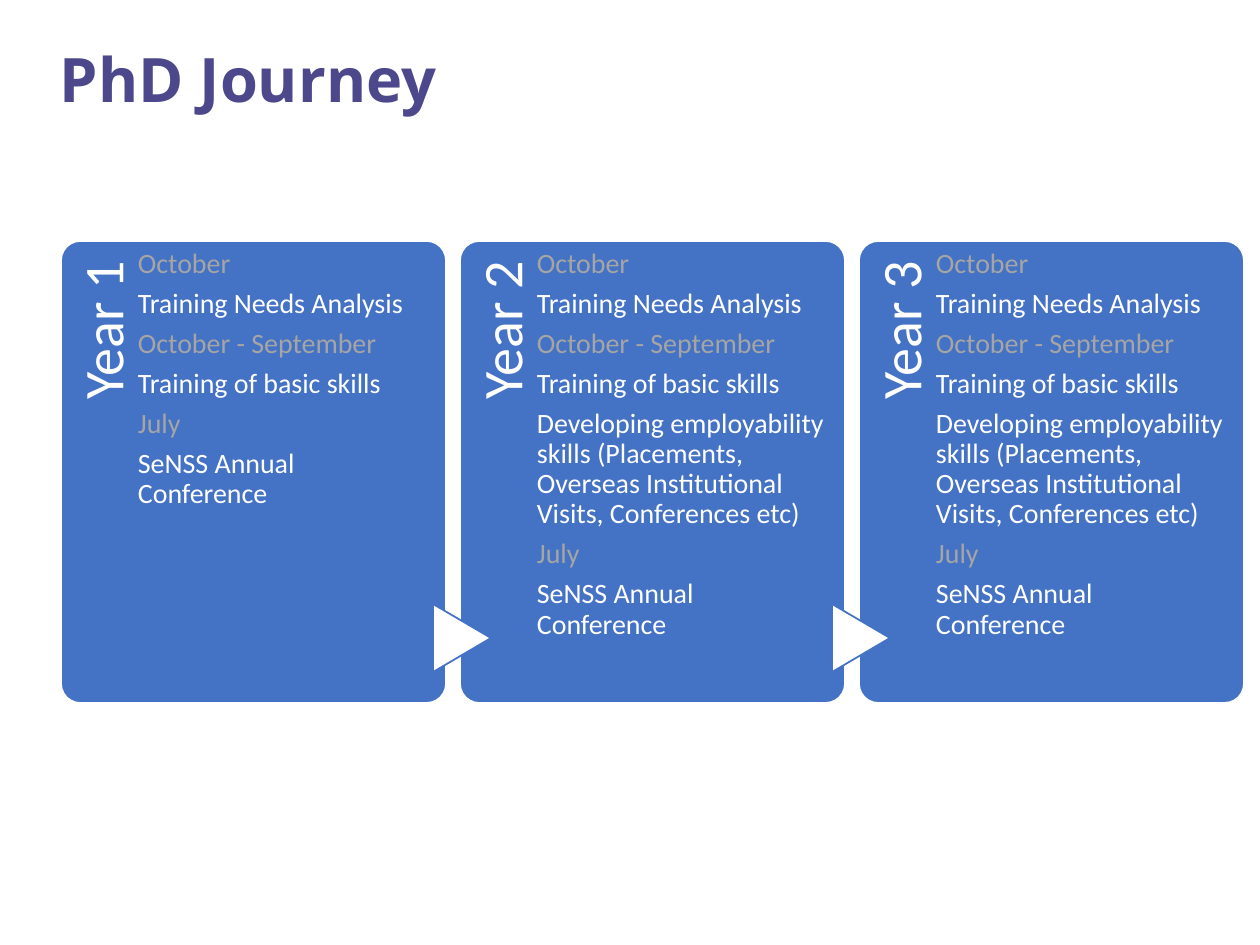
from dataclasses import dataclass

from pptx import Presentation
from pptx.dml.color import RGBColor
from pptx.enum.shapes import MSO_SHAPE as Preset
from pptx.enum.text import MSO_ANCHOR as Anchor, PP_ALIGN as Align
from pptx.util import Emu, Pt

EMU_PER_PX = 914400 / 126


def px(length):
    return Emu(round(length * EMU_PER_PX))


@dataclass(frozen=True)
class Theme:
    title_color: RGBColor = RGBColor.from_string("4C488B")
    card_color: RGBColor = RGBColor.from_string("4472C4")
    month_color: RGBColor = RGBColor.from_string("A5A5A5")
    white: RGBColor = RGBColor.from_string("FFFFFF")
    title_font: str = "Open Sans"
    body_font: str = "Calibri"
    title_size: int = 35
    year_size: int = 32
    body_size: int = 16
    line_spacing: float = 0.9
    space_after: float = 0.35  # share of the type size


class SlideBuilder:
    def __init__(self, slide, theme):
        self.slide = slide
        self.theme = theme

    def shape(self, preset, box, fill, line, rotation=0):
        shape = self.slide.shapes.add_shape(preset, *map(px, box))
        shape.shadow.inherit = False
        shape.fill.solid()
        shape.fill.fore_color.rgb = fill
        shape.line.color.rgb = line
        shape.line.width = Pt(1)
        shape.rotation = rotation
        return shape

    def text(self, box, lines, size, font, insets, gap=0,
             align=Align.LEFT, anchor=Anchor.TOP, bold=False, rotation=0):
        """Write lines given as (wording, color) pairs, one paragraph each."""
        shape = self.slide.shapes.add_textbox(*map(px, box))
        shape.rotation = rotation
        frame = shape.text_frame
        frame.word_wrap = True
        frame.vertical_anchor = anchor
        (frame.margin_left, frame.margin_top,
         frame.margin_right, frame.margin_bottom) = map(px, insets)
        frame.text = "\n".join(wording for wording, _ in lines)
        for paragraph, (_, color) in zip(frame.paragraphs, lines):
            paragraph.alignment = align
            paragraph.line_spacing = self.theme.line_spacing
            paragraph.space_after = Pt(size * gap)
            for run in paragraph.runs:
                run.font.name = font
                run.font.size = Pt(size)
                run.font.bold = bold
                run.font.color.rgb = color

    def title(self, wording):
        theme = self.theme
        self.text((47, 21, 1086, 123), [(wording, theme.title_color)],
                  theme.title_size, theme.title_font, (13, 6, 13, 6),
                  anchor=Anchor.MIDDLE, bold=True)

    def card(self, left):
        theme = self.theme
        card = self.shape(Preset.ROUNDED_RECTANGLE, (left, 241, 385, 462),
                          theme.card_color, theme.white)
        card.adjustments[0] = 0.05

    def year_label(self, card_left, wording):
        theme = self.theme
        self.text((card_left - 152, 392, 379, 77), [(wording, theme.white)],
                  theme.year_size, theme.body_font, (0, 15, 20, 0),
                  theme.space_after, align=Align.RIGHT, rotation=270)

    def arrow(self, card_left):
        self.shape(Preset.FLOWCHART_EXTRACT, (card_left - 32, 609, 68, 58),
                   self.theme.white, self.theme.card_color, rotation=90)

    def activities(self, card_left, schedule):
        theme = self.theme
        lines = []
        for month, items in schedule:
            lines.append((month, theme.month_color))
            lines += [(item, theme.white) for item in items]
        self.text((card_left + 77, 241, 288, 462), lines, theme.body_size,
                  theme.body_font, (0, 8, 0, 0), theme.space_after)


FIRST_LEFT, CARD_PITCH = 61, 399
BASIC = ["Training of basic skills"]
EMPLOYABILITY = ["Developing employability skills (Placements, Overseas "
                 "Institutional Visits, Conferences etc)"]
YEARS = [
    ("Year 1", BASIC),
    ("Year 2", BASIC + EMPLOYABILITY),
    ("Year 3", BASIC + EMPLOYABILITY),
]


def main():
    presentation = Presentation()
    presentation.slide_width, presentation.slide_height = px(1260), px(945)
    slide = presentation.slides.add_slide(presentation.slide_layouts[6])
    builder = SlideBuilder(slide, Theme())

    builder.title("PhD Journey")

    # One card per year, with an arrow from the year before
    for index, (year, training) in enumerate(YEARS):
        left = FIRST_LEFT + index * CARD_PITCH
        builder.card(left)
        builder.year_label(left, year)
        if index:
            builder.arrow(left)
        builder.activities(left, [
            ("October", ["Training Needs Analysis"]),
            ("October - September", training),
            ("July", ["SeNSS Annual Conference"]),
        ])

    presentation.save("out.pptx")


if __name__ == "__main__":
    main()
